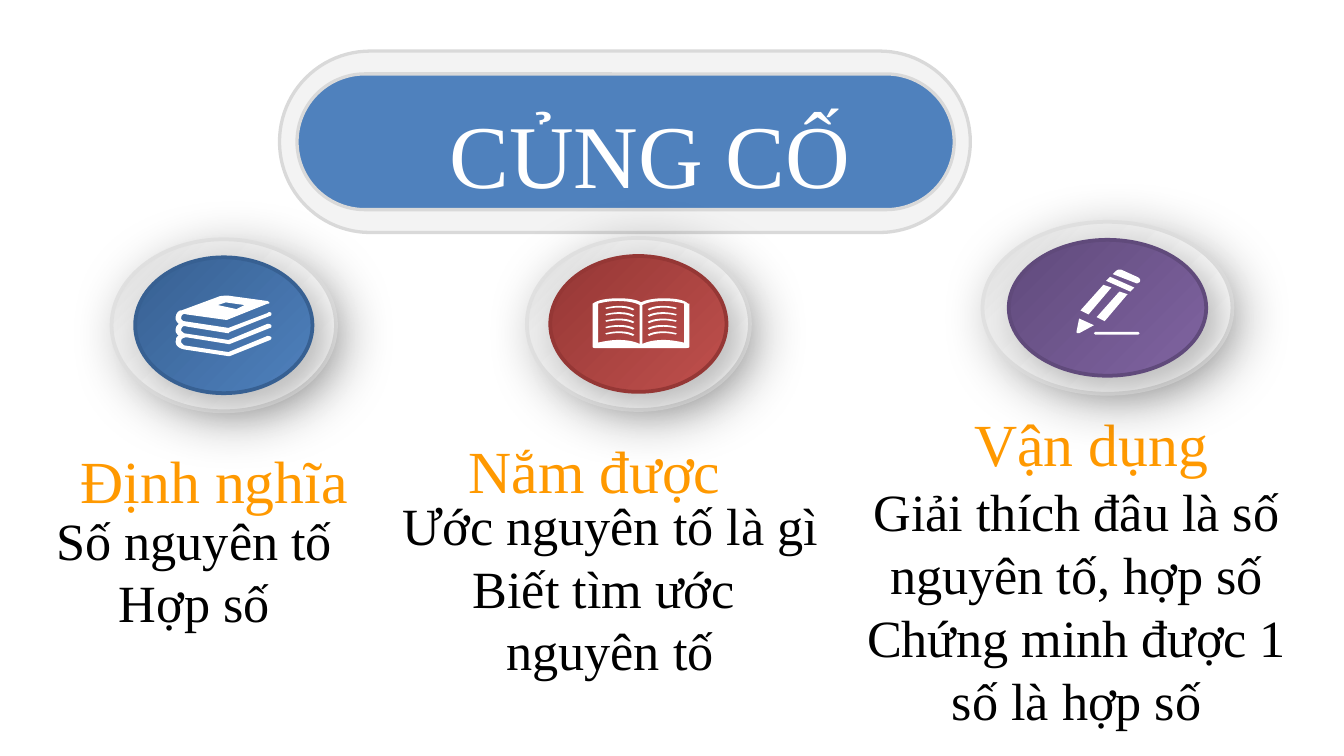
from lxml.etree import SubElement
from pptx import Presentation
from pptx.dml.color import RGBColor
from pptx.enum.shapes import MSO_SHAPE
from pptx.enum.text import PP_ALIGN
from pptx.oxml.ns import qn
from pptx.util import Inches, Pt

THEME = {
    "font": "Times New Roman",
    "title_size": 48, "heading_size": 32, "body_size": 28,
    "white": "FFFFFF", "black": "000000", "orange": "FF9900",
    "pill": "4F81BD", "pill_frame": "F3F3F3", "pill_line": "D9D9D9",
    "ring": [(0, "FFFFFF"), (73, "ECECEC"), (100, "D9D9D9")], "ring_line": "E0E0E0",
    "blue": ("4F81BD", "376092"), "red": ("C0504D", "953735"), "purple": ("8064A2", "604A7B"),
    "ring_shadow": {"alpha": 28, "blur": 28, "distance": 7},
    "disc_shadow": {"alpha": 25, "blur": 20, "distance": 9},
}

# The slide is a grid of 100 columns; rows are as high as columns are wide.
SLIDE_WIDTH = Inches(10)
SLIDE_HEIGHT = SLIDE_WIDTH * 9 // 16
GRID = SLIDE_WIDTH / 100
DISC_SHARE = 0.79
CURVE_STEPS = 8

TITLE = {"text": "CỦNG CỐ", "frame": (20.8, 3.8, 51.4, 13.5),
         "pill": (22.1, 5.5, 48.9, 10.1), "label": (26.7, 2.9, 43.3, 8.9)}

COLUMNS = [
    {"heading": "Định nghĩa", "heading_at": (0.9, 32.5, 30.1, 6.4),
     "body": ["Số nguyên tố", "Hợp số"], "body_at": (0, 37.3, 28.9, 9.2),
     "ring": (8.3, 17.8, 16.7, 12.8), "colour": "blue", "icon": "books", "icon_at": (13, 22)},
    {"heading": "Nắm được", "heading_at": (33.8, 31.8, 20.9, 6.4),
     "body": ["Ước nguyên tố là gì", "Biết tìm ước ", "nguyên tố"],
     "body_at": (28.1, 36.2, 34.6, 11.5),
     "ring": (39.2, 17.7, 16.6, 12.8), "colour": "red", "icon": "book", "icon_at": (44.1, 22.2)},
    {"heading": "Vận dụng", "heading_at": (71.4, 29.8, 19.6, 6.4),
     "body": ["Giải thích đâu là số nguyên tố, hợp số", "Chứng minh được 1 số là hợp số"],
     "body_at": (63, 35.2, 34.2, 9.4),
     "ring": (73.1, 16.5, 18.6, 12.8), "colour": "purple", "icon": "pencil",
     "icon_at": (80.1, 20)},
]

# Icon outlines in tenths of a grid column. Two numbers are a corner,
# six are a Bézier curve: two control points and the end.
BOOK_WIDTH = 72
BOOK_COVER = [(71, 4), (68, 1, 61, 0, 53, 0), (46, 0, 40, 1, 36, 3), (33, 1, 27, 0, 19, 0),
              (11, 0, 4, 1, 0, 4), (0, 36), (0, 37, 1, 37, 2, 37), (69, 37),
              (70, 37, 72, 37, 72, 36), (72, 4)]
BOOK_PAGE = [(35, 5), (35, 34), (31, 32, 26, 31, 19, 31), (14, 31, 8, 32, 4, 33), (4, 4),
             (4, 4, 10, 2, 19, 2), (30, 2, 35, 5, 35, 5)]
BOOK_LINE = [(9.5, 7), (17, 5, 26, 5, 31, 8), (30, 9), (26, 7, 19, 6, 10, 8)]
BOOK_LINE_COUNT, BOOK_LINE_GAP = 5, 4.75
BOOKS = [
    [(40, 36), (41, 36), (71, 24), (72, 24, 72, 23, 72, 22), (71, 21, 70, 21, 69, 21),
     (40, 33), (7, 28), (6, 27, 4, 26, 5, 25), (5, 23, 7, 22, 9, 23), (40, 28), (41, 27),
     (71, 15), (72, 15, 72, 14, 72, 13), (71, 12, 70, 12, 69, 13), (40, 24), (7, 19),
     (6, 19, 4, 17, 5, 16), (5, 14, 7, 13, 9, 14), (38, 18), (39, 18), (69, 6),
     (71, 6, 71, 5, 69, 4), (40, 0), (37, 0, 34, 0, 32, 1), (5, 11), (4, 11),
     (2, 12, 1, 14, 1, 15), (0, 17, 1, 19, 3, 21), (2, 22, 1, 23, 1, 24),
     (0, 26, 1, 28, 3, 30), (2, 30, 1, 31, 1, 33), (0, 36, 2, 39, 7, 40), (40, 45),
     (41, 45), (71, 33), (72, 32, 72, 32, 72, 31), (71, 30, 70, 30, 69, 30), (40, 42),
     (7, 37), (6, 36, 4, 35, 5, 33), (5, 32, 7, 31, 9, 31)],
    [(38, 5), (52, 7), (46, 10), (32, 7)],
]
PENCIL = [
    [(29, 2), (30, 1, 32, 0, 34, 1), (45, 6), (47, 7, 48, 8, 47, 10), (45, 11), (27, 4)],
    [(25, 6), (22, 9), (40, 17), (43, 14)],
    [(0, 47), (2, 37), (13, 42), (2, 48), (1, 48, 0, 48, 0, 47)],
    [(3, 31), (20, 12), (26, 14), (9, 34)],
    [(15, 36), (32, 17), (38, 19), (21, 39)],
    [(14, 47), (46, 47), (47, 48), (46, 49), (14, 49), (13, 48)],
]


def mirror(outline):
    """Flip an outline about the spine of the book."""
    return [tuple(BOOK_WIDTH - value if index % 2 == 0 else value
                  for index, value in enumerate(node)) for node in outline]


def lower(outline, distance):
    return [tuple(value + distance * (index % 2) for index, value in enumerate(node))
            for node in outline]


def book_shapes():
    lines = [lower(BOOK_LINE, row * BOOK_LINE_GAP) for row in range(BOOK_LINE_COUNT)]
    return ([[BOOK_COVER, BOOK_PAGE, mirror(BOOK_PAGE)]]
            + [[line] for line in lines] + [[mirror(line)] for line in lines])


ICONS = {"books": [BOOKS], "book": book_shapes(), "pencil": [PENCIL]}


def flatten(outline):
    """Turn corners and Bézier curves into a list of points."""
    points = []
    for node in outline:
        if len(node) == 2:
            points.append(node)
            continue
        controls = [points[-1], node[0:2], node[2:4], node[4:6]]
        for step in range(1, CURVE_STEPS + 1):
            t = step / CURVE_STEPS
            weights = ((1 - t) ** 3, 3 * t * (1 - t) ** 2, 3 * t * t * (1 - t), t ** 3)
            points.append(tuple(sum(w * c[axis] for w, c in zip(weights, controls))
                                for axis in (0, 1)))
    return points


def place(area):
    return [round(value * GRID) for value in area]


def colour(value):
    return RGBColor.from_string(value)


def add_text(page, lines, area, *, size, tint, spacing=None, wrap=True):
    box = page.shapes.add_textbox(*place(area))
    frame = box.text_frame
    frame.word_wrap = wrap
    for index, line in enumerate(lines):
        para = frame.paragraphs[0] if index == 0 else frame.add_paragraph()
        para.alignment = PP_ALIGN.CENTER
        para.line_spacing = spacing
        span = para.add_run()
        span.text = line
        span.font.name = THEME["font"]
        span.font.size = Pt(size)
        span.font.color.rgb = colour(tint)


def add_pill(page, area, fill):
    pill = page.shapes.add_shape(MSO_SHAPE.ROUNDED_RECTANGLE, *place(area))
    pill.adjustments[0] = 0.5
    pill.shadow.inherit = False
    pill.fill.solid()
    pill.fill.fore_color.rgb = colour(fill)
    pill.line.color.rgb = colour(THEME["pill_line"])
    pill.line.width = Pt(1.75)


def add_ellipse(page, area, stops, line, shadow):
    ellipse = page.shapes.add_shape(MSO_SHAPE.OVAL, *place(area))
    ellipse.rotation = 180
    ellipse.line.color.rgb = colour(line)
    ellipse.line.width = Pt(2)
    ellipse.fill.gradient()
    properties = ellipse.fill._xPr
    gradient = properties.find(qn("a:gradFill"))
    stop_list = gradient.find(qn("a:gsLst"))
    for old_stop in list(stop_list):
        stop_list.remove(old_stop)
    for position, tint in stops:
        stop = SubElement(stop_list, qn("a:gs"), pos=str(position * 1000))
        SubElement(stop, qn("a:srgbClr"), val=tint)
    diagonal = str(45 * 60000)
    gradient.find(qn("a:lin")).set("ang", diagonal)
    ellipse.shadow.inherit = False
    outer = SubElement(properties.find(qn("a:effectLst")), qn("a:outerShdw"),
                       blurRad=str(Pt(shadow["blur"])), dist=str(Pt(shadow["distance"])),
                       dir=diagonal, algn="ctr", rotWithShape="0")
    tint = SubElement(outer, qn("a:srgbClr"), val=THEME["black"])
    SubElement(tint, qn("a:alpha"), val=str(shadow["alpha"] * 1000))


def add_icon(page, shapes, corner):
    left, top = place(corner)
    for outlines in shapes:
        builder = None
        for outline in outlines:
            points = [(left + x * GRID / 10, top + y * GRID / 10) for x, y in flatten(outline)]
            if builder is None:
                builder = page.shapes.build_freeform(*points[0])
            else:
                builder.move_to(*points[0])
            builder.add_line_segments(points[1:], close=True)
        icon = builder.convert_to_shape()
        icon.shadow.inherit = False
        icon.fill.solid()
        icon.fill.fore_color.rgb = colour(THEME["white"])
        icon.line.fill.background()


def add_column(page, column):
    add_text(page, [column["heading"]], column["heading_at"], wrap=False,
             size=THEME["heading_size"], tint=THEME["orange"])
    add_text(page, column["body"], column["body_at"],
             size=THEME["body_size"], tint=THEME["black"])
    left, top, width, height = column["ring"]
    margin = (1 - DISC_SHARE) / 2
    disc = (left + width * margin, top + height * margin, width * DISC_SHARE, height * DISC_SHARE)
    light, dark = THEME[column["colour"]]
    add_ellipse(page, column["ring"], THEME["ring"], THEME["ring_line"], THEME["ring_shadow"])
    add_ellipse(page, disc, [(0, light), (100, dark)], dark, THEME["disc_shadow"])
    add_icon(page, ICONS[column["icon"]], column["icon_at"])


deck = Presentation()
deck.slide_width, deck.slide_height = SLIDE_WIDTH, SLIDE_HEIGHT
page = deck.slides.add_slide(deck.slide_layouts[6])
add_pill(page, TITLE["frame"], THEME["pill_frame"])
add_pill(page, TITLE["pill"], THEME["pill"])
add_text(page, [TITLE["text"]], TITLE["label"], spacing=1.5,
         size=THEME["title_size"], tint=THEME["white"])
for column in COLUMNS:
    add_column(page, column)
deck.save("out.pptx")
